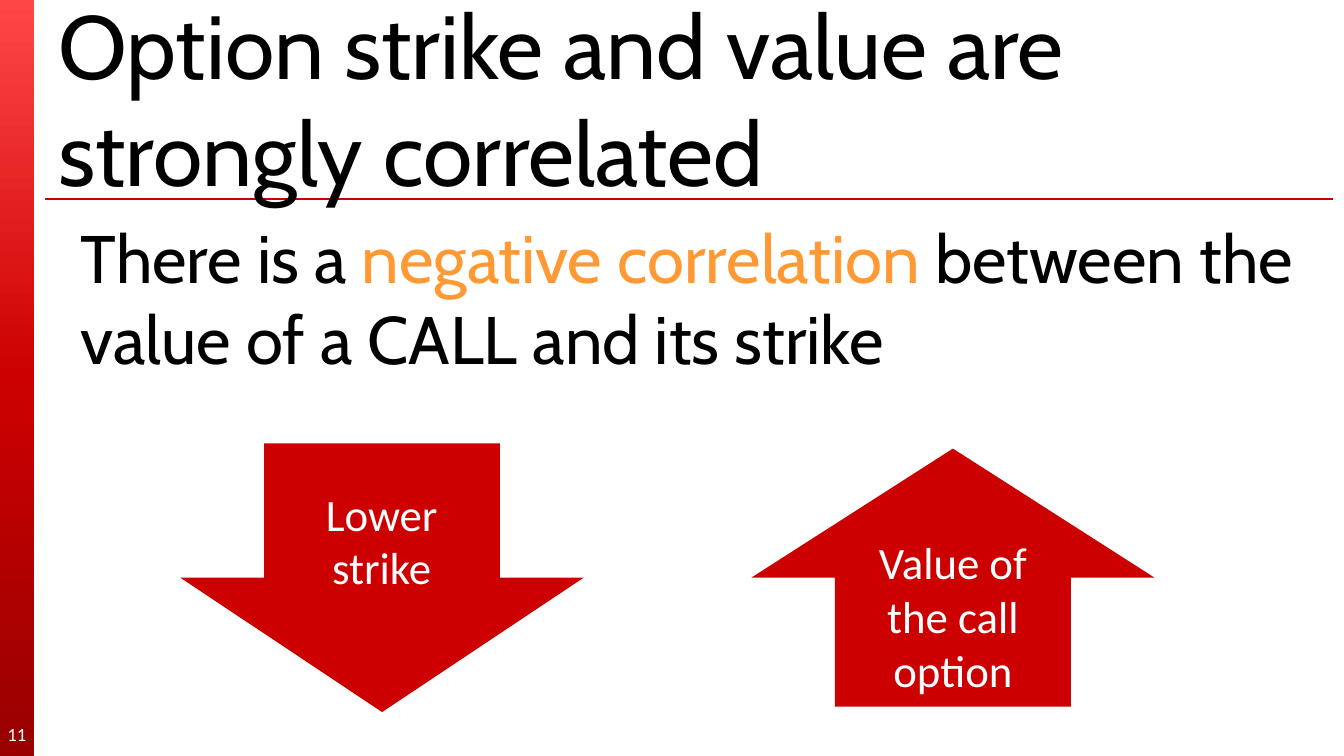
from copy import deepcopy

from lxml import etree
from pptx import Presentation
from pptx.dml.color import RGBColor
from pptx.enum.shapes import MSO_CONNECTOR, MSO_SHAPE
from pptx.enum.text import MSO_ANCHOR, MSO_AUTO_SIZE, PP_ALIGN
from pptx.oxml.ns import qn
from pptx.util import Cm, Pt

RECTANGLE, UP_ARROW = MSO_SHAPE.RECTANGLE, MSO_SHAPE.UP_ARROW
STRAIGHT = MSO_CONNECTOR.STRAIGHT
TOP, MIDDLE = MSO_ANCHOR.TOP, MSO_ANCHOR.MIDDLE
LEFT, CENTER = PP_ALIGN.LEFT, PP_ALIGN.CENTER
NO_AUTOFIT = MSO_AUTO_SIZE.NONE

PAGE_WIDTH, PAGE_HEIGHT = Cm(25.4), Cm(14.29)
STRIP_WIDTH = Cm(0.64)
RED, WHITE, BLACK, ORANGE = "CC0000", "FFFFFF", "000000", "FF9933"


def color(code):
    return RGBColor.from_string(code)


def place(shape, left, top, width, height):
    shape.left, shape.top = left, top
    shape.width, shape.height = width, height


def write(shape, spans, font, size, align, anchor):
    """Fill a shape with one paragraph made of (text, colour) spans."""
    frame = shape.text_frame
    frame.word_wrap = True
    frame.auto_size = NO_AUTOFIT
    frame.vertical_anchor = anchor
    para = frame.paragraphs[0]
    para.alignment = align
    para.space_before = Pt(0)
    for text, code in spans:
        span = para.add_run()
        span.text = text
        span.font.name = font
        span.font.size = Pt(size)
        span.font.color.rgb = color(code)
    return para


def add_block(shapes, kind, left, top, width, height):
    """Add a plain red shape without outline or shadow."""
    block = shapes.add_shape(kind, left, top, width, height)
    block.shadow.inherit = False
    block.fill.solid()
    block.fill.fore_color.rgb = color(RED)
    block.line.fill.background()
    return block


def add_arrow(shapes, left, top, width, height):
    arrow = add_block(shapes, UP_ARROW, left, top, width, height)
    arrow.adjustments[0] = 0.585
    arrow.adjustments[1] = 0.5
    return arrow


def add_side_strip(page):
    strip = add_block(page.shapes, RECTANGLE, 0, 0, STRIP_WIDTH, PAGE_HEIGHT)
    strip.fill.gradient()
    strip.fill.gradient_angle = 270
    # A third stop is needed between the two default ones
    stops = strip._element.spPr.find(qn("a:gradFill")).find(qn("a:gsLst"))
    stops.insert(1, deepcopy(stops[0]))
    levels = ((0, "FF4747"), (0.5, RED), (1, "990000"))
    for stop, (position, code) in zip(strip.fill.gradient_stops, levels):
        stop.position = position
        stop.color.rgb = color(code)


def add_rule(page):
    height = Cm(3.76)
    rule = page.shapes.add_connector(STRAIGHT, Cm(0.85), height, Cm(25.2), height)
    rule.line.color.rgb = color("C80000")
    rule.line.width = Pt(0.75)
    etree.SubElement(rule._element.spPr, qn("a:effectLst"))


def fill_title(page):
    title = page.shapes.title
    place(title, Cm(0.85), Cm(0.15), Cm(24.33), Cm(3.38))
    title.fill.solid()
    title.fill.fore_color.rgb = color(WHITE)
    spans = [("Option strike and value are strongly correlated", BLACK)]
    write(title, spans, "Cabin", 48, LEFT, MIDDLE)
    page.shapes._spTree.append(title._element)  # in front of the rule


def fill_body(page):
    body = page.placeholders[1]
    place(body, Cm(1.27), Cm(3.96), Cm(23.7), Cm(10.31))
    spans = [
        ("There is a ", BLACK),
        ("negative correlation ", ORANGE),
        ("between the value of a CALL and its strike", BLACK),
    ]
    para = write(body, spans, "Cabin", 36, LEFT, TOP)
    properties = para._p.get_or_add_pPr()
    properties.set("marL", "0")
    properties.set("indent", "0")
    etree.SubElement(properties, qn("a:buNone"))
    page.shapes._spTree.append(body._element)


def add_page_number(page):
    box = page.shapes.add_textbox(0, Cm(13.49), STRIP_WIDTH, Cm(0.76))
    frame = box.text_frame
    frame.margin_left = frame.margin_right = 0
    frame.margin_top = frame.margin_bottom = 0
    write(box, [("11", WHITE)], "Calibri", 10, CENTER, MIDDLE)


def add_strike_arrow(page):
    """Downward arrow with its label set on the shaft."""
    group = page.shapes.add_group_shape()
    arrow = add_arrow(group.shapes, Cm(3.41), Cm(8.38), Cm(7.62), Cm(5.08))
    arrow.rotation = 180
    label = add_block(group.shapes, RECTANGLE, Cm(5.21), Cm(8.94), Cm(4.01), Cm(2.54))
    write(label, [("Lower strike", WHITE)], "Calibri", 24, CENTER, MIDDLE)


def add_value_arrow(page):
    arrow = add_arrow(page.shapes, Cm(14.2), Cm(8.48), Cm(7.62), Cm(4.88))
    write(arrow, [("Value of the call option", WHITE)], "Calibri", 24, CENTER, MIDDLE)


def main():
    deck = Presentation()
    deck.slide_width, deck.slide_height = PAGE_WIDTH, PAGE_HEIGHT
    page = deck.slides.add_slide(deck.slide_layouts[1])
    # Frame of the page
    add_side_strip(page)
    add_rule(page)
    # Text
    fill_title(page)
    fill_body(page)
    add_page_number(page)
    # Opposite movements
    add_value_arrow(page)
    add_strike_arrow(page)
    deck.save("out.pptx")


if __name__ == "__main__":
    main()
